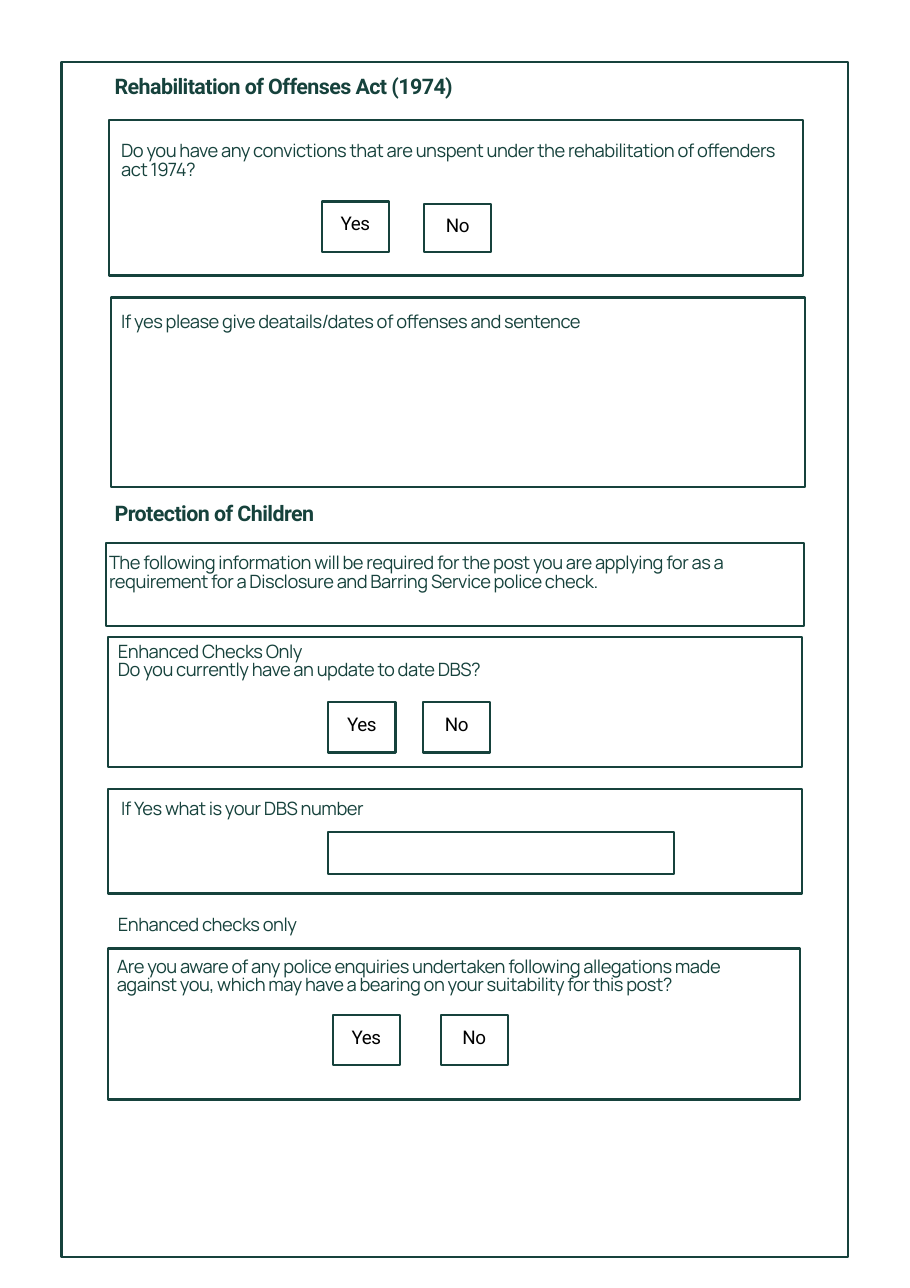
import pptx
import pptx.util
import pptx.dml.color
import pptx.enum.shapes
import pptx.enum.text

Inches, Pt = pptx.util.Inches, pptx.util.Pt
ANCHOR = pptx.enum.text.MSO_ANCHOR
ALIGN = pptx.enum.text.PP_ALIGN
GREEN, BLACK = "16423C", "000000"

HEADING = {"name": "Roboto", "size": 14, "bold": True, "color": GREEN, "spacing": -0.4}
BODY = {"name": "Manrope", "size": 12, "bold": False, "color": GREEN, "spacing": -0.3}
ANSWER = {"name": "Roboto", "size": 12.3, "bold": False, "color": BLACK, "spacing": -0.3}


def rgb(value):
    return pptx.dml.color.RGBColor.from_string(value)


def write(holder, lines, style, align=ALIGN.LEFT, anchor=ANCHOR.TOP, margins=(0, 0, 0, 0)):
    frame = holder.text_frame
    frame_format = {"word_wrap": True, "vertical_anchor": anchor}
    for side, margin in zip(("left", "top", "right", "bottom"), margins):
        frame_format["margin_" + side] = Inches(margin)
    for name, value in frame_format.items():
        setattr(frame, name, value)
    frame.text = "\n".join(lines)
    for paragraph in frame.paragraphs:
        paragraph.alignment = align
        paragraph.line_spacing = Pt(style["size"])
        for run in paragraph.runs:
            font_format = {"name": style["name"], "size": Pt(style["size"]), "bold": style["bold"]}
            for name, value in font_format.items():
                setattr(run.font, name, value)
            run.font.color.rgb = rgb(style["color"])
            # Letter spacing in hundredths of a point
            run._r.get_or_add_rPr().set("spc", str(round(style["spacing"] * 100)))


form = pptx.Presentation()
form.slide_width, form.slide_height = Inches(8.26), Inches(11.69)
page = form.slides.add_slide(form.slide_layouts[5])

# Page frame, question panels and the DBS number field
panels = [
    (0.56, 0.56, 7.14, 10.85),
    (1.01, 2.7, 6.3, 1.72),
    (0.98, 5.78, 6.3, 1.18),
    (0.98, 7.16, 6.3, 0.95),
    (0.96, 4.93, 6.34, 0.75),
    (0.99, 1.09, 6.3, 1.41),
    (2.98, 7.55, 3.14, 0.38),
    (0.98, 8.61, 6.28, 1.37),
]

# Yes and No boxes: left edges of the pair, then top and height of each
answers = []
for yes_left, no_left, yes_top, no_top in (
    (2.92, 3.85, 1.83, 1.85),
    (2.98, 3.84, 6.37, 6.37),
    (3.02, 4, 9.21, 9.21),
):
    answers.append(("Yes", (yes_left, yes_top, 0.61, 0.46)))
    answers.append(("No", (no_left, no_top, 0.61, 0.46 - (no_top - yes_top))))

for label, place in [("", panel) for panel in panels] + answers:
    box = page.shapes.add_shape(
        pptx.enum.shapes.MSO_SHAPE.RECTANGLE, *[Inches(length) for length in place])
    box.shadow.inherit = False
    box.fill.background()
    box.line.color.rgb = rgb(GREEN)
    box.line.width = Pt(1.5)
    if label:
        write(box, [label], ANSWER, ALIGN.CENTER, ANCHOR.MIDDLE, (0.06, 0.06, 0.06, 0.09))

# Main heading
heading = page.shapes.title
heading_place = {"left": 1.04, "top": 0.7, "width": 3.27, "height": 0.24}
for name, value in heading_place.items():
    setattr(heading, name, Inches(value))
write(heading, ["Rehabilitation of Offenses Act (1974)"], HEADING)
heading.text_frame.auto_size = pptx.enum.text.MSO_AUTO_SIZE.NONE

# Second heading, questions and instructions
wording = [
    ((1.04, 4.58, 2.15, 0.24), HEADING, ["Protection of Children"]),
    ((1.1, 1.3, 6.07, 0.36), BODY, [
        "Do you have any convictions that are unspent under the rehabilitation of offenders act 1974?"]),
    ((1.1, 2.85, 5.92, 0.19), BODY, [
        "If yes please give deatails/dates of offenses and sentence"]),
    ((0.99, 5.04, 6.3, 0.36), BODY, [
        "The following information will be required for the post you are applying for as a "
        "requirement for a Disclosure and Barring Service police check."]),
    ((1.07, 5.84, 3.89, 0.52), BODY, [
        "Enhanced Checks Only",
        "Do you currently have an update to date DBS?"]),
    ((1.1, 7.27, 3.38, 0.19), BODY, ["If Yes what is your DBS number"]),
    ((1.07, 8.32, 2.29, 0.19), BODY, ["Enhanced checks only"]),
    ((1.06, 8.7, 6.15, 0.36), BODY, [
        "Are you aware of any police enquiries undertaken following allegations made",
        "against you, which may have a bearing on your suitability for this post?"]),
]
for place, style, lines in wording:
    passage = page.shapes.add_textbox(*[Inches(length) for length in place])
    write(passage, lines, style)

form.save("out.pptx")
